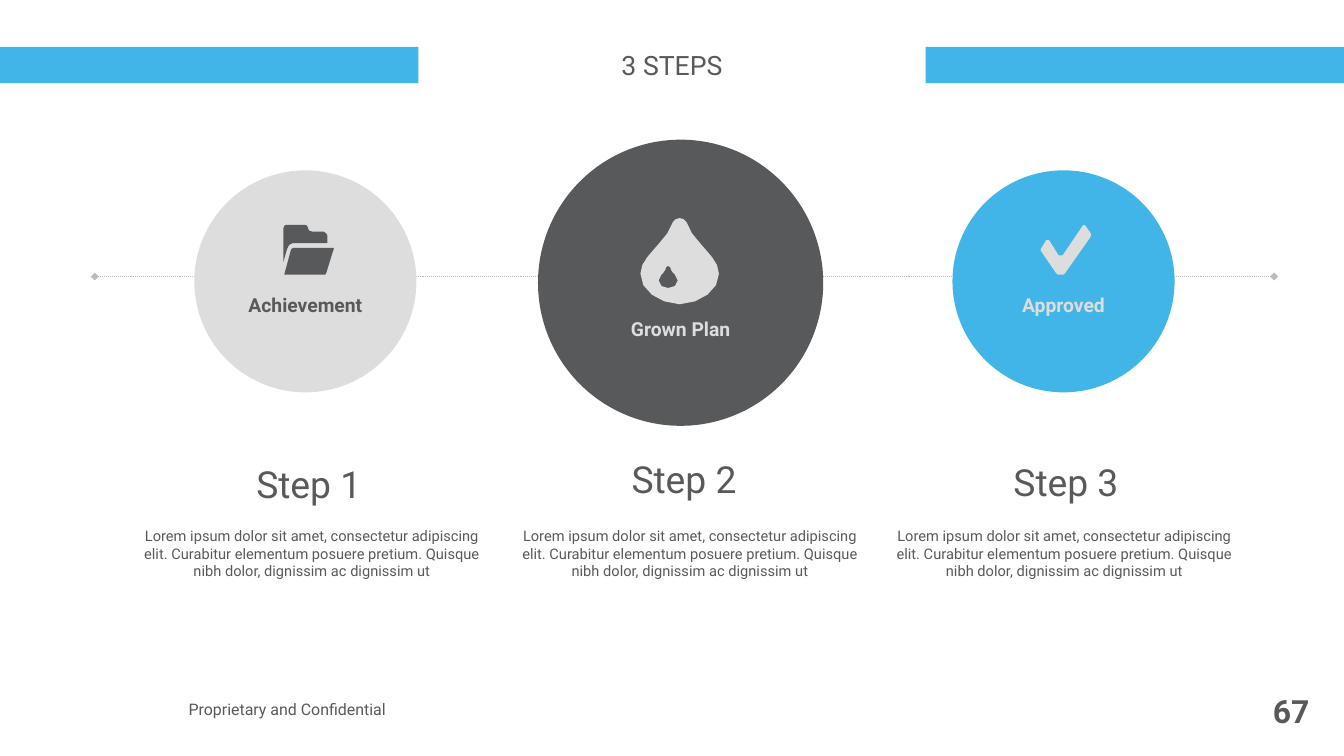
import pptx
import pptx.util
import pptx.dml.color
import pptx.enum.dml
import pptx.enum.shapes
import pptx.enum.text
import pptx.oxml
import pptx.oxml.ns

Inches = pptx.util.Inches
SHAPE = pptx.enum.shapes.MSO_SHAPE
ALIGN = pptx.enum.text.PP_ALIGN
ANCHOR = pptx.enum.text.MSO_ANCHOR
FIT = pptx.enum.text.MSO_AUTO_SIZE

DARK, BLUE, PALE, GREY, WHITE = "58595B", "41B5E8", "DDDDDD", "BCBCBC", "FFFFFF"
WIDE, HIGH = 14.04, 7.9
PAD = (0.27, 0.13, 0.27, 0.13)
LOREM = ("Lorem ipsum dolor sit amet, consectetur adipiscing elit. "
         "Curabitur elementum posuere pretium. "
         "Quisque nibh dolor, dignissim ac dignissim ut")


def paint(target, color):
    """Set a fill or font colour from a hex string."""
    if hasattr(target, "solid"):
        target.solid()
        target = target.fore_color
    else:
        target = target.color
    target.rgb = pptx.dml.color.RGBColor.from_string(color)


def write(shape, text, size=11, color=DARK, bold=False, align=ALIGN.CENTER,
          anchor=ANCHOR.MIDDLE, pad=PAD, wrap=True, fit=FIT.NONE, face="Roboto"):
    frame = shape.text_frame
    frame.word_wrap, frame.auto_size = wrap, fit
    frame.vertical_anchor = anchor
    (frame.margin_left, frame.margin_top,
     frame.margin_right, frame.margin_bottom) = map(Inches, pad)
    para = frame.paragraphs[0]
    para.alignment = align
    run = para.add_run()
    run.text = text
    run.font.name, run.font.size, run.font.bold = face, pptx.util.Pt(size), bold
    paint(run.font, color)


def mirror(mid, half):
    """Close a half outline, given as offsets from its middle, into a full one."""
    right = [(mid + x, y) for x, y in half]
    left = [(mid - x, y) for x, y in reversed(half) if x]
    return right + left


# Icon outlines, in hundredths of an inch
FOLDER = [
    [(306, 254), (302, 256), (300, 260), (296, 274), (296, 239), (297, 236),
     (299, 235), (319, 235), (321, 236), (322, 239), (323, 241), (326, 242),
     (338, 242), (341, 244), (342, 246), (342, 254)],
    [(349, 259), (341, 285), (340, 287), (339, 287), (297, 287), (304, 261),
     (305, 260), (306, 259)],
]
DROP = [
    mirror(710, [(0, 228), (4, 229), (7, 232), (13, 244), (22, 255), (29, 263),
                 (34, 269), (39, 277), (41, 286), (38, 298), (29, 308),
                 (16, 315), (0, 318)]),
    mirror(698, [(0, 278), (2, 279), (3, 282), (5, 285), (7, 287), (8, 289),
                 (10, 293), (7, 299), (0, 301)]),
]
CHECK = [
    [(1107, 287), (1105, 287), (1103, 285), (1088, 263), (1087, 261), (1088, 259),
     (1093, 251), (1094, 251), (1096, 251), (1106, 267), (1108, 267), (1110, 267),
     (1131, 236), (1132, 235), (1134, 236), (1139, 243), (1140, 245), (1139, 248),
     (1113, 285), (1111, 287), (1109, 287)],
]


class Deck:
    def __init__(self):
        self.show = pptx.Presentation()
        self.show.slide_width, self.show.slide_height = Inches(WIDE), Inches(HIGH)
        self.slide = self.show.slides.add_slide(self.show.slide_layouts[5])
        self.shapes = self.slide.shapes

    def title(self, text, box, **style):
        head = self.shapes.title
        head.left, head.top, head.width, head.height = map(Inches, box)
        paint(head.fill, WHITE)
        write(head, text, **style)
        # Bring the title in front of the band
        head.element.getparent().append(head.element)

    def finish(self, shape, color):
        shape.shadow.inherit = False
        paint(shape.fill, color)
        shape.line.fill.background()
        return shape

    def shape(self, kind, box, color):
        return self.finish(self.shapes.add_shape(kind, *map(Inches, box)), color)

    def text(self, text, box, **style):
        write(self.shapes.add_textbox(*map(Inches, box)), text, **style)

    def rule(self, left, right, y):
        line = self.shapes.add_connector(
            pptx.enum.shapes.MSO_CONNECTOR.STRAIGHT,
            Inches(left), Inches(y), Inches(right), Inches(y))
        paint(line.line.fill, GREY)
        line.line.width = pptx.util.Pt(0.75)
        line.line.dash_style = pptx.enum.dml.MSO_LINE.ROUND_DOT
        props = line.element.spPr
        stroke = props.find(pptx.oxml.ns.qn("a:ln"))
        space = pptx.oxml.ns.nsdecls("a")
        for end in ("headEnd", "tailEnd"):
            stroke.append(pptx.oxml.parse_xml(f'<a:{end} {space} type="diamond"/>'))
        props.append(pptx.oxml.parse_xml(f"<a:effectLst {space}/>"))

    def icon(self, parts, color):
        pen = self.shapes.build_freeform(*parts[0][0], scale=Inches(0.01))
        pen.add_line_segments(parts[0][1:], close=True)
        for part in parts[1:]:
            pen.move_to(*part[0])
            pen.add_line_segments(part[1:], close=True)
        self.finish(pen.convert_to_shape(), color)


def main():
    deck = Deck()

    # Header band and title
    deck.shape(SHAPE.RECTANGLE, (0, 0.49, WIDE, 0.38), BLUE)
    deck.title("3 STEPS", (4.37, 0.41, 5.3, 0.54), size=20, pad=(0.1,) * 4,
               fit=FIT.SHAPE_TO_FIT_TEXT)

    # Footer
    deck.text("Proprietary and Confidential", (1.93, 7.09, 3.49, 0.65), size=12,
              align=ALIGN.LEFT, pad=(0.04,) * 4)
    deck.text("67", (13.08, 7.22, 0.6, 0.41), size=24, bold=True,
              align=ALIGN.RIGHT, pad=(0,) * 4, wrap=False)

    # Steps: label, circle, top inset, fill, ink, icon, heading spot, body left
    deck.rule(0.99, 13.31, 2.89)
    steps = [
        ("Achievement", (2.03, 1.78, 2.32, 2.32), 0.6, PALE, DARK, FOLDER,
         (1.13, 4.68), 1.23),
        ("Grown Plan", (5.62, 1.46, 2.98, 2.99), 1.06, DARK, PALE, DROP,
         (5.05, 4.63), 5.18),
        ("Approved", (9.95, 1.78, 2.32, 2.32), 0.6, BLUE, PALE, CHECK,
         (9.04, 4.66), 9.09),
    ]
    for num, (label, box, drop, fill, ink, icon, spot, left) in enumerate(steps, 1):
        disc = deck.shape(SHAPE.OVAL, box, fill)
        write(disc, label, size=14.5, color=ink, bold=True, pad=(0.2, drop, 0.2, 0.1))
        deck.icon(icon, ink)
        deck.text(f"Step {num}", (*spot, 4.19, 0.74), size=28,
                  fit=FIT.SHAPE_TO_FIT_TEXT)
        deck.text(LOREM, (left, 5.38, 4.06, 1.8), anchor=ANCHOR.TOP)

    deck.show.save("out.pptx")


if __name__ == "__main__":
    main()
